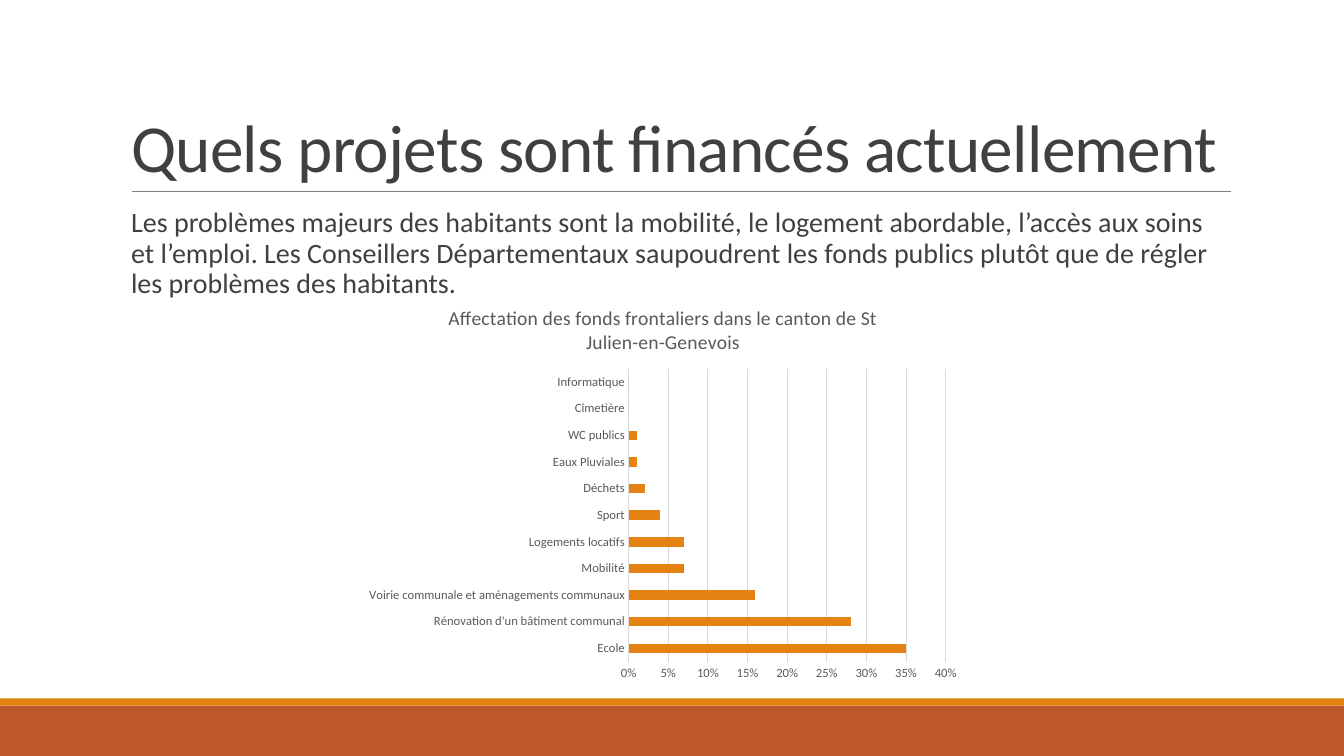
from dataclasses import dataclass
from typing import Any

from lxml.etree import SubElement
from pptx import Presentation
from pptx.chart.data import CategoryChartData
from pptx.dml.color import RGBColor
from pptx.enum.chart import XL_CHART_TYPE as ChartType, XL_TICK_MARK as Tick
from pptx.enum.shapes import MSO_CONNECTOR as Connector, MSO_SHAPE as Shape
from pptx.enum.text import MSO_ANCHOR as Anchor, MSO_AUTO_SIZE as AutoSize, PP_ALIGN as Align
from pptx.oxml.ns import qn
from pptx.util import Inches, Pt


@dataclass(frozen=True)
class Theme:
    font: str = "Calibri"
    rust: str = "BD582C"
    orange: str = "E48312"
    rule: str = "808080"
    text: str = "404040"
    chart_text: str = "595959"
    grid: str = "D9D9D9"
    title_size: float = 48
    body_size: float = 20
    chart_title_size: float = 14
    axis_size: float = 9


@dataclass(frozen=True)
class Box:
    left: float
    top: float
    width: float
    height: float

    def lengths(self) -> tuple:
        return tuple(Inches(v) for v in (self.left, self.top, self.width, self.height))


@dataclass(frozen=True)
class Band:
    box: Box
    color: str


THEME = Theme()
WIDTH, HEIGHT = 13.33, 7.5
BANDS = (
    Band(Box(0, 7, WIDTH, 0.5), THEME.rust),
    Band(Box(0, 6.93, WIDTH, 0.07), THEME.orange),
)
TITLE_BOX = Box(1.2, 0.31, 11, 1.59)
BODY_BOX = Box(1.2, 2.02, 11, 4.4)
CHART_BOX = Box(3.54, 2.85, 6.07, 3.98)

TITLE = "Quels projets sont financés actuellement"
BODY = (
    "Les problèmes majeurs des habitants sont la mobilité, le logement abordable, "
    "l’accès aux soins et l’emploi. Les Conseillers Départementaux saupoudrent les "
    "fonds publics plutôt que de régler les problèmes des habitants."
)
CHART_TITLE = "Affectation des fonds frontaliers dans le canton de St Julien-en-Genevois"
FUND_SHARES = {
    "Ecole": 0.35,
    "Rénovation d'un bâtiment communal": 0.28,
    "Voirie communale et aménagements communaux": 0.16,
    "Mobilité": 0.07,
    "Logements locatifs": 0.07,
    "Sport": 0.04,
    "Déchets": 0.02,
    "Eaux Pluviales": 0.01,
    "WC publics": 0.01,
    "Cimetière": 0,
    "Informatique": 0,
}


def set_all(target: Any, formats: dict) -> None:
    for name, value in formats.items():
        setattr(target, name, value)


def set_font(font: Any, size: float, color: str) -> None:
    set_all(font, {"name": THEME.font, "size": Pt(size), "bold": False})
    font.color.rgb = RGBColor.from_string(color)


def set_line(line: Any, color: str, width: float) -> None:
    line.color.rgb = RGBColor.from_string(color)
    line.width = Pt(width)


def add_band(s: Any, band: Band) -> None:
    sp = s.shapes.add_shape(Shape.RECTANGLE, *band.box.lengths())
    sp.shadow.inherit = False
    sp.fill.solid()
    sp.fill.fore_color.rgb = RGBColor.from_string(band.color)
    sp.line.fill.background()


def add_rule(s: Any) -> None:
    ends = (Inches(v) for v in (1.31, 1.9, 12.21, 1.9))
    rule = s.shapes.add_connector(Connector.STRAIGHT, *ends)
    set_line(rule.line, THEME.rule, 0.5)
    SubElement(rule.element.spPr, qn("a:effectLst"))


def fill_placeholder(sp: Any, box: Box, text: str, size: float,
                     frame: dict, paragraph: dict) -> Any:
    """Place the placeholder, write its single paragraph and return it."""
    set_all(sp, dict(zip(("left", "top", "width", "height"), box.lengths())))
    tf = sp.text_frame
    set_all(tf, {"word_wrap": True, "auto_size": AutoSize.NONE, **frame})
    p = tf.paragraphs[0]
    set_all(p, {"alignment": Align.LEFT, **paragraph})
    r = p.add_run()
    r.text = text
    set_font(r.font, size, THEME.text)
    return p


def add_blank_bullet(p: Any) -> None:
    pPr = p._p.get_or_add_pPr()
    pPr.set("marL", str(Inches(0.1)))
    pPr.set("indent", str(Inches(-0.1)))
    SubElement(SubElement(pPr, qn("a:buClr")), qn("a:srgbClr"), val=THEME.orange)
    SubElement(pPr, qn("a:buFont"), typeface=THEME.font)
    SubElement(pPr, qn("a:buChar"), char=" ")


def add_fund_chart(s: Any) -> None:
    data = CategoryChartData(number_format="0%")
    data.categories = list(FUND_SHARES)
    data.add_series("Series 1", list(FUND_SHARES.values()))
    chart = s.shapes.add_chart(ChartType.BAR_CLUSTERED, *CHART_BOX.lengths(), data).chart
    set_font(chart.font, THEME.axis_size, THEME.chart_text)
    set_all(chart, {"has_legend": False, "has_title": True})

    p = chart.chart_title.text_frame.paragraphs[0]
    r = p.add_run()
    r.text = CHART_TITLE
    set_font(r.font, THEME.chart_title_size, THEME.chart_text)
    chart.chart_title.include_in_layout = False

    plot = chart.plots[0]
    set_all(plot, {"gap_width": 182, "vary_by_categories": False})
    fill = plot.series[0].format.fill
    fill.solid()
    fill.fore_color.rgb = RGBColor.from_string(THEME.orange)

    cat, val = chart.category_axis, chart.value_axis
    for axis in (cat, val):
        set_all(axis, {"major_tick_mark": Tick.NONE, "minor_tick_mark": Tick.NONE})
        set_font(axis.tick_labels.font, THEME.axis_size, THEME.chart_text)
    set_line(cat.format.line, THEME.grid, 0.75)
    set_all(val, {"minimum_scale": 0, "maximum_scale": 0.4, "major_unit": 0.05,
                  "has_major_gridlines": True})
    val.format.line.fill.background()
    set_line(val.major_gridlines.format.line, THEME.grid, 0.75)
    set_all(val.tick_labels, {"number_format": "0%", "number_format_is_linked": False})


def main() -> None:
    prs = Presentation()
    set_all(prs, {"slide_width": Inches(WIDTH), "slide_height": Inches(HEIGHT)})
    s = prs.slides.add_slide(prs.slide_layouts[1])
    for band in BANDS:
        add_band(s, band)
    add_rule(s)

    title = fill_placeholder(s.shapes.title, TITLE_BOX, TITLE, THEME.title_size,
                             {"vertical_anchor": Anchor.BOTTOM}, {"line_spacing": 0.85})
    title.runs[0].font._element.set("spc", "-50")
    body = fill_placeholder(
        s.placeholders[1], BODY_BOX, BODY, THEME.body_size,
        {"vertical_anchor": Anchor.TOP, "margin_left": 0, "margin_right": 0},
        {"line_spacing": 0.9, "space_before": Pt(12), "space_after": Pt(2)})
    add_blank_bullet(body)

    add_fund_chart(s)
    prs.save("out.pptx")


if __name__ == "__main__":
    main()
